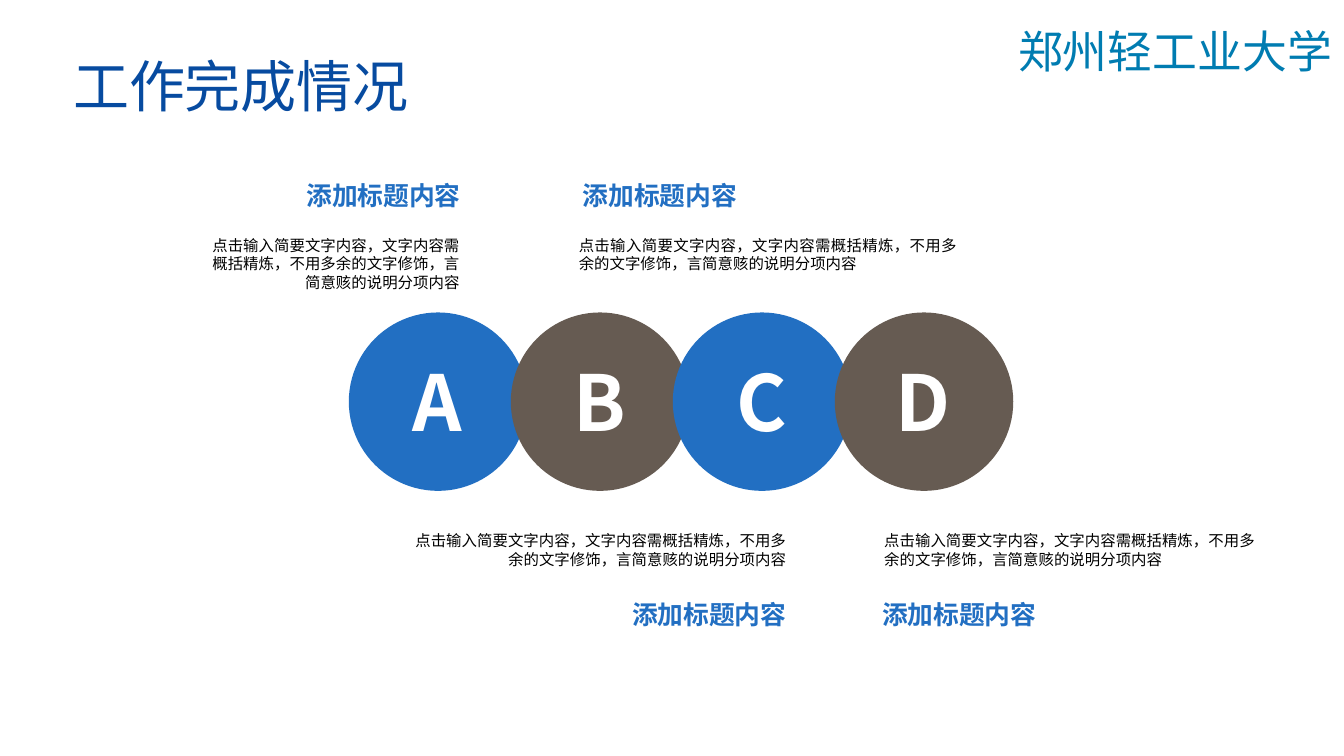
from dataclasses import dataclass
from lxml.etree import SubElement
from pptx import Presentation
from pptx.dml.color import RGBColor
from pptx.enum.shapes import MSO_SHAPE
from pptx.enum.text import MSO_ANCHOR, MSO_AUTO_SIZE, PP_ALIGN
from pptx.oxml.ns import qn
from pptx.util import Inches, Pt


@dataclass(frozen=True)
class Theme:
    font: str = "Noto Sans CJK SC"
    navy: str = "074BA0"
    teal: str = "007CB1"
    blue: str = "226FC2"
    brown: str = "665B52"
    white: str = "FFFFFF"
    black: str = "000000"
    title: float = 40
    school: float = 32
    letter: float = 55.1
    head: float = 18.4
    body: float = 11


theme = Theme()


def write(shape, text, size, color, align=PP_ALIGN.LEFT, bold=False):
    """Put one styled run into the shape's first paragraph."""
    para = shape.text_frame.paragraphs[0]
    para.alignment = align
    run = para.add_run()
    run.text = text
    font = run.font
    font.name, font.size, font.bold = theme.font, Pt(size), bold
    font.color.rgb = RGBColor.from_string(color)
    SubElement(font._element, qn("a:ea")).set("typeface", theme.font)


def add_box(left, top, width, height, inset=True, wrap=True):
    box = slide.shapes.add_textbox(
        Inches(left), Inches(top), Inches(width), Inches(height))
    frame = box.text_frame
    frame.word_wrap = wrap
    if not inset:
        frame.margin_left = frame.margin_right = 0
        frame.margin_top = frame.margin_bottom = 0
    return box


deck = Presentation()
deck.slide_width, deck.slide_height = Inches(13.33), Inches(7.5)
slide = deck.slides.add_slide(deck.slide_layouts[5])

# Title and school name
title = slide.shapes.title
title.left, title.top = Inches(-0.32), Inches(0.64)
title.width, title.height = Inches(5.42), Inches(0.4)
title.text_frame.auto_size = MSO_AUTO_SIZE.NONE
title.text_frame.vertical_anchor = MSO_ANCHOR.MIDDLE
write(title, "工作完成情况", theme.title, theme.navy, PP_ALIGN.CENTER)

school = add_box(10, 0.19, 3.33, 0.58, wrap=False)
write(school, "郑州轻工业大学", theme.school, theme.teal)

# Chain of overlapping circles, then their letters
size = 1.77
lefts = [3.46 + 4.82 / 3 * i for i in range(4)]
for i, left in enumerate(lefts):
    disc = slide.shapes.add_shape(
        MSO_SHAPE.OVAL, Inches(left), Inches(3.1), Inches(size), Inches(size))
    disc.shadow.inherit = False
    disc.fill.solid()
    disc.fill.fore_color.rgb = RGBColor.from_string(
        theme.brown if i % 2 else theme.blue)
    disc.line.fill.background()

for left, letter in zip(lefts, "ABCD"):
    box = add_box(left + 0.35, 3.47, 1.06, 1.03)
    write(box, letter, theme.letter, theme.white, PP_ALIGN.CENTER, bold=True)

# Notes: A and B above the chain, C and D below it
head_text = "添加标题内容"
body_text = "点击输入简要文字内容，文字内容需概括精炼，不用多余的文字修饰，言简意赅的说明分项内容"
above, below = (1.78, 2.34), (5.94, 5.27)
notes = [
    # rows, head left, body left, body width, body height, head and body align
    (above, 2.71, 1.96, 2.6, 0.56, PP_ALIGN.RIGHT, PP_ALIGN.RIGHT),
    (above, 5.78, 5.74, 3.75, 0.37, PP_ALIGN.LEFT, PP_ALIGN.JUSTIFY),
    (below, 5.94, 4.06, 3.74, 0.37, PP_ALIGN.RIGHT, PP_ALIGN.RIGHT),
    (below, 8.75, 8.77, 3.74, 0.37, PP_ALIGN.LEFT, PP_ALIGN.LEFT),
]
for (head_top, body_top), head_left, left, width, height, head_align, align in notes:
    body = add_box(left, body_top, width, height, inset=False)
    write(body, body_text, theme.body, theme.black, align)
    head = add_box(head_left, head_top, 1.86, 0.31, inset=False)
    write(head, head_text, theme.head, theme.blue, head_align, bold=True)

deck.save("out.pptx")
